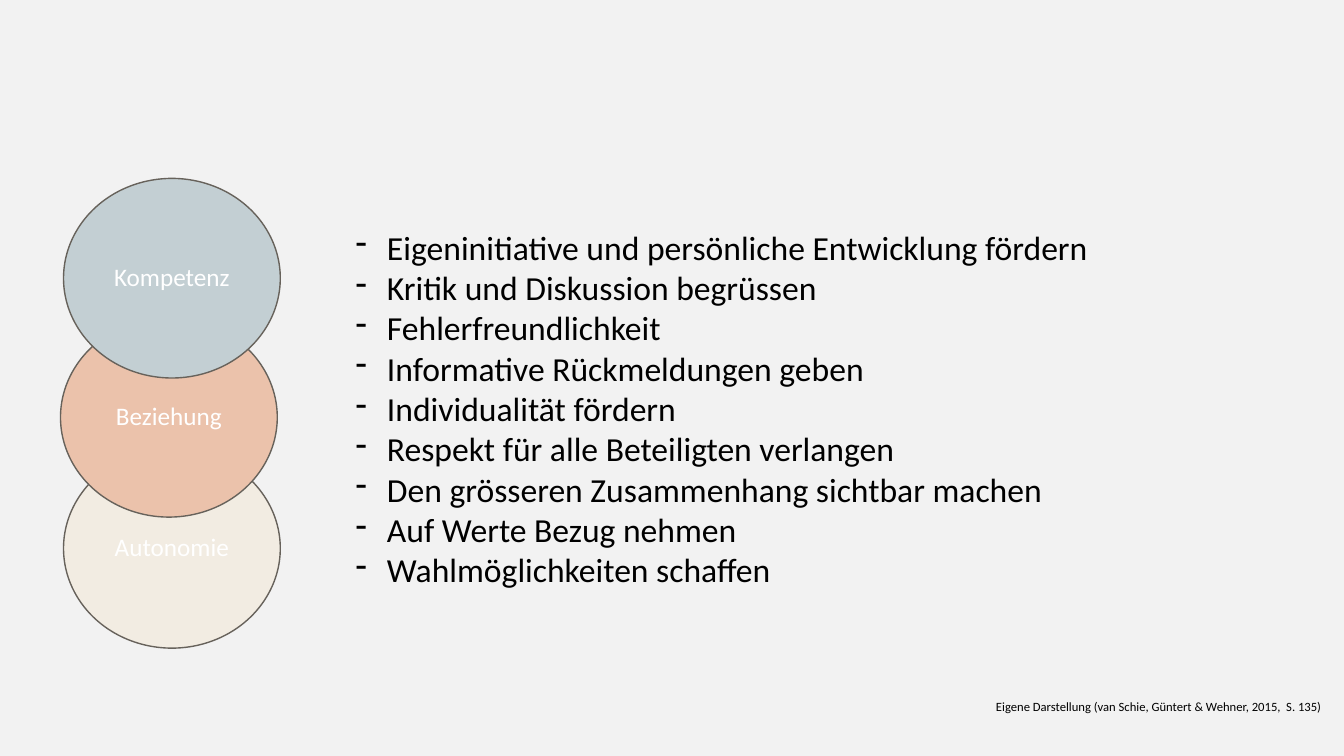
from lxml import etree
from pptx import Presentation
from pptx.dml.color import RGBColor
from pptx.enum.shapes import MSO_SHAPE
from pptx.enum.text import MSO_ANCHOR, PP_ALIGN
from pptx.oxml.ns import qn
from pptx.util import Inches, Pt

FONT = "Calibri"
BLACK = RGBColor(0x00, 0x00, 0x00)
WHITE = RGBColor(0xFF, 0xFF, 0xFF)
GREY = RGBColor(0xF2, 0xF2, 0xF2)
EDGE = RGBColor(0x67, 0x62, 0x5B)
CREAM = RGBColor(0xF2, 0xEC, 0xE2)
PEACH = RGBColor(0xEB, 0xC2, 0xAB)
BLUE = RGBColor(0xC3, 0xCF, 0xD3)

# label, left, top, fill; from back to front
NEEDS = [
    ("Autonomie", 0.63, 4.45, CREAM),
    ("Beziehung", 0.6, 3.15, PEACH),
    ("Kompetenz", 0.63, 1.77, BLUE),
]
ACTIONS = [
    "Eigeninitiative und persönliche Entwicklung fördern",
    "Kritik und Diskussion begrüssen",
    "Fehlerfreundlichkeit",
    "Informative Rückmeldungen geben",
    "Individualität fördern",
    "Respekt für alle Beteiligten verlangen",
    "Den grösseren Zusammenhang sichtbar machen",
    "Auf Werte Bezug nehmen",
    "Wahlmöglichkeiten schaffen",
]
CREDIT = "Eigene Darstellung (van Schie, Güntert & Wehner, 2015,  S. 135)"
INDENT = Inches(0.31)


def style(par, size, color):
    par.font.name = FONT
    par.font.size = Pt(size)
    par.font.color.rgb = color


def add_dash(par):
    """Give the paragraph a hanging dash as its bullet."""
    props = par._p.get_or_add_pPr()
    props.set("marL", str(INDENT))
    props.set("indent", str(-INDENT))
    bullet = etree.Element(qn("a:buChar"), char="-")
    props.insert(0, bullet)


def add_text(slide, box, lines, size, dash=False):
    frame = slide.shapes.add_textbox(*map(Inches, box)).text_frame
    frame.word_wrap = True
    frame.text = "\n".join(lines)
    for par in frame.paragraphs:
        if dash:
            add_dash(par)
        style(par, size, BLACK)


def add_need(slide, label, left, top, fill):
    disc = slide.shapes.add_shape(
        MSO_SHAPE.FLOWCHART_CONNECTOR,
        Inches(left), Inches(top), Inches(2.15), Inches(1.98))
    disc.shadow.inherit = False
    disc.fill.solid()
    disc.fill.fore_color.rgb = fill
    disc.line.color.rgb = EDGE
    disc.line.width = Pt(1)
    frame = disc.text_frame
    frame.vertical_anchor = MSO_ANCHOR.MIDDLE
    frame.text = label
    par = frame.paragraphs[0]
    par.alignment = PP_ALIGN.CENTER
    par.line_spacing = 0.9
    style(par, 18, WHITE)


def main():
    deck = Presentation()
    deck.slide_width = Inches(13.33)
    deck.slide_height = Inches(7.5)
    slide = deck.slides.add_slide(deck.slide_layouts[6])
    slide.background.fill.solid()
    slide.background.fill.fore_color.rgb = GREY

    add_text(slide, (3.43, 2.2, 9.61, 3.74), ACTIONS, 24, dash=True)
    for need in NEEDS:
        add_need(slide, *need)
    add_text(slide, (9.78, 6.88, 3.55, 0.25), [CREDIT], 9)
    deck.save("out.pptx")


if __name__ == "__main__":
    main()
